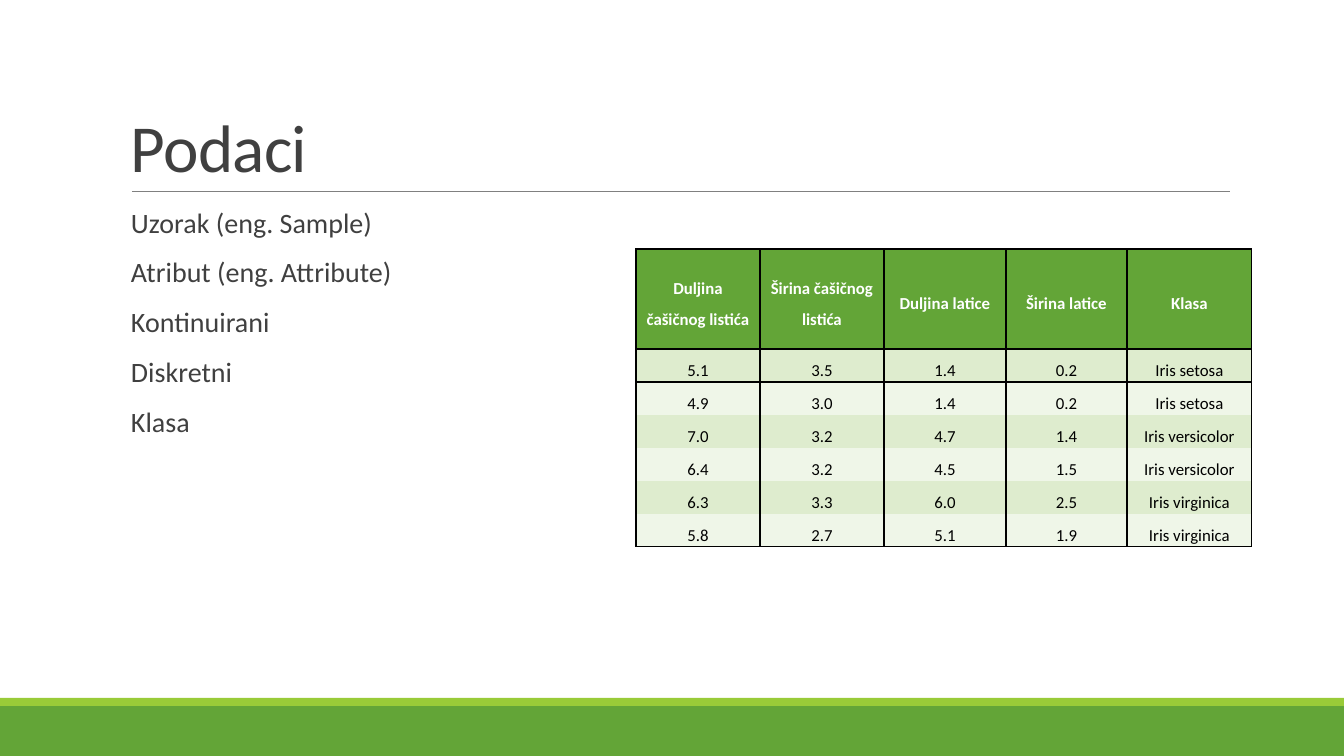
from lxml.etree import SubElement
from pptx import Presentation
from pptx.dml.color import RGBColor
from pptx.enum.shapes import MSO_CONNECTOR, MSO_SHAPE
from pptx.enum.text import MSO_ANCHOR, PP_ALIGN
from pptx.oxml.ns import qn
from pptx.util import Pt

PX = 914400 / 100.8  # EMU per px
GREEN = RGBColor(0x63, 0xA5, 0x37)
LIME = RGBColor(0x99, 0xCB, 0x38)
BAND_DARK = RGBColor(0xDE, 0xEC, 0xCE)
BAND_LIGHT = RGBColor(0xEF, 0xF6, 0xE8)
DARK = RGBColor(0x40, 0x40, 0x40)
GREY = RGBColor(0x80, 0x80, 0x80)
BLACK = RGBColor(0, 0, 0)
WHITE = RGBColor(0xFF, 0xFF, 0xFF)
NO_STYLE = "{2D5ABB26-0587-4C30-8999-92F81FD0307C}"


def px(*values):
    return [round(v * PX) for v in values]


def write(tf, text, size, color, bold=False, align=PP_ALIGN.LEFT, line=1.0,
          before=0, after=0, spacing=None):
    """Fill a text frame with one paragraph per line of text."""
    tf.word_wrap = True
    for i, words in enumerate(text.split("\n")):
        p = tf.add_paragraph() if i else tf.paragraphs[0]
        p.alignment, p.line_spacing = align, line
        p.space_before, p.space_after = Pt(before), Pt(after)
        r = p.add_run()
        r.text = words
        r.font.name, r.font.size, r.font.bold = "Calibri", Pt(size), bold
        r.font.color.rgb = color
        if spacing is not None:
            r.font._element.set("spc", str(spacing))


prs = Presentation()
prs.slide_width, prs.slide_height = px(1344, 756)
s = prs.slides.add_slide(prs.slide_layouts[6])

# Footer bands
for top, height, color in [(706, 50, GREEN), (698, 8, LIME)]:
    sp = s.shapes.add_shape(MSO_SHAPE.RECTANGLE, *px(0, top, 1344, height))
    sp.shadow.inherit = False
    sp.fill.solid()
    sp.fill.fore_color.rgb = color
    sp.line.fill.background()

# Rule under the title
rule = s.shapes.add_connector(MSO_CONNECTOR.STRAIGHT, *px(132, 191, 1230, 191))
rule.line.color.rgb = GREY
rule.line.width = Pt(0.5)
SubElement(rule._element.spPr, qn("a:effectLst"))

# Title
tf = s.shapes.add_textbox(*px(121, 31, 1109, 160)).text_frame
tf.vertical_anchor = MSO_ANCHOR.BOTTOM
write(tf, "Podaci", 48, DARK, line=0.85, spacing=-50)

# Terms on the left
tf = s.shapes.add_textbox(*px(121, 204, 544, 444)).text_frame
tf.margin_left, tf.margin_right = px(10, 0)
write(tf, "Uzorak (eng. Sample)\nAtribut (eng. Attribute)\nKontinuirani\nDiskretni\nKlasa",
      20, DARK, line=0.9, before=12, after=2)

# Iris table
rows = [
    ["Duljina čašičnog listića", "Širina čašičnog listića", "Duljina latice",
     "Širina latice", "Klasa"],
    ["5.1", "3.5", "1.4", "0.2", "Iris setosa"],
    ["4.9", "3.0", "1.4", "0.2", "Iris setosa"],
    ["7.0", "3.2", "4.7", "1.4", "Iris versicolor"],
    ["6.4", "3.2", "4.5", "1.5", "Iris versicolor"],
    ["6.3", "3.3", "6.0", "2.5", "Iris virginica"],
    ["5.8", "2.7", "5.1", "1.9", "Iris virginica"],
]
widths = [124, 124, 122, 121, 125]
heights = [100] + [33] * 6
table = s.shapes.add_table(len(rows), len(widths),
                           *px(636, 249, sum(widths), sum(heights))).table
table.horz_banding = False
table._tbl.tblPr[0].text = NO_STYLE
for col, width in zip(table.columns, px(*widths)):
    col.width = width
for row, height in zip(table.rows, px(*heights)):
    row.height = height

for i, values in enumerate(rows):
    header = i == 0
    sides = ["lnL", "lnR"]
    if i < 2:
        sides.append("lnT")
    if header or i == len(rows) - 1:
        sides.append("lnB")
    for j, value in enumerate(values):
        cell = table.cell(i, j)
        cell.vertical_anchor = MSO_ANCHOR.MIDDLE
        cell.margin_left, cell.margin_right = px(7, 7)
        cell.margin_top = cell.margin_bottom = 0
        tcPr = cell._tc.get_or_add_tcPr()
        for side in sides:
            ln = SubElement(tcPr, qn(f"a:{side}"), w=str(Pt(1)))
            fill = SubElement(ln, qn("a:solidFill"))
            SubElement(fill, qn("a:srgbClr"), val=str(BLACK))
        cell.fill.solid()
        cell.fill.fore_color.rgb = GREEN if header else BAND_DARK if i % 2 else BAND_LIGHT
        write(cell.text_frame, value, 12, WHITE if header else BLACK, bold=header,
              align=PP_ALIGN.CENTER, line=1.5,
              before=0 if header else 6, after=0 if header else 6)

prs.save("out.pptx")
